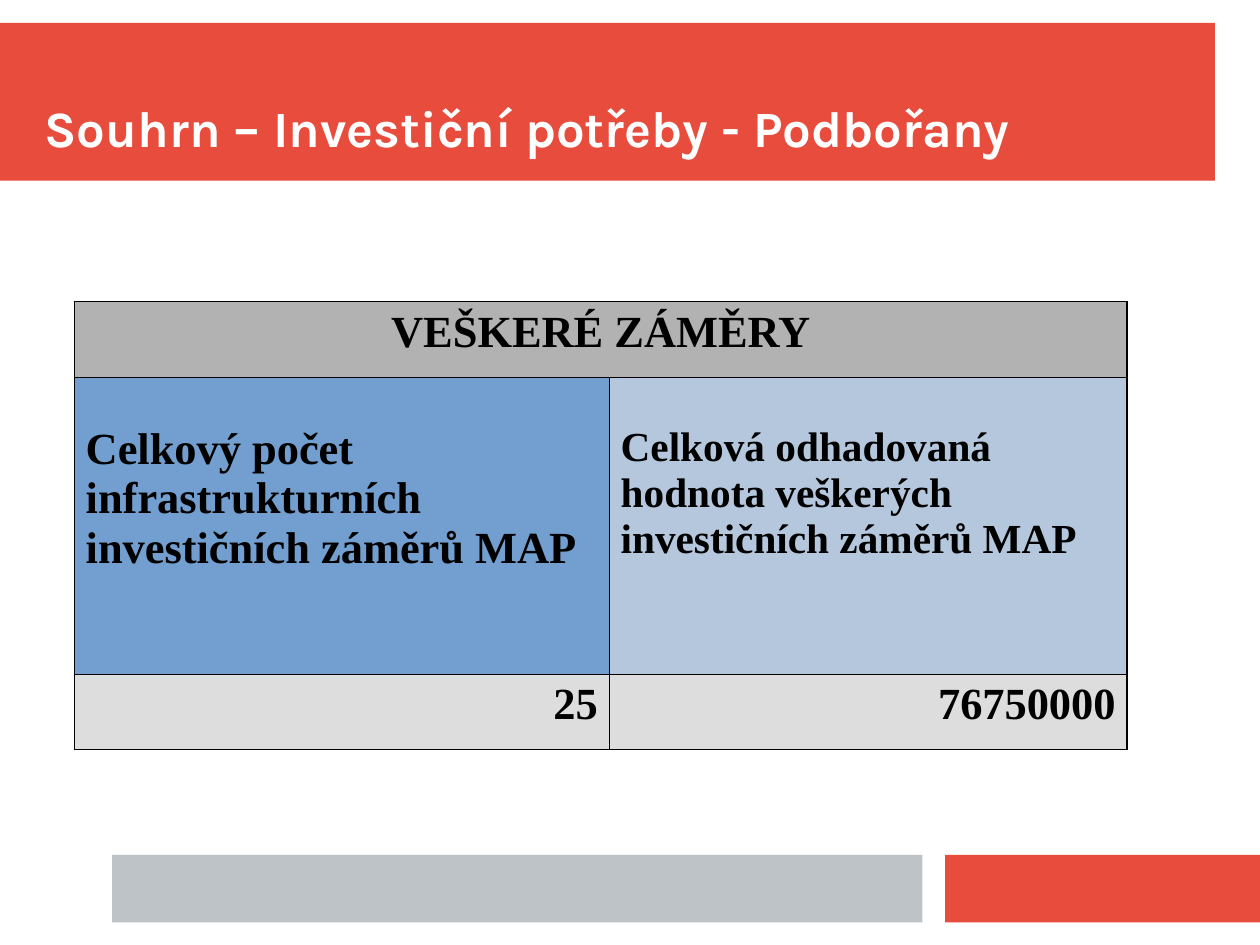
from lxml import etree
from pptx import Presentation
from pptx import util as u
from pptx.dml.color import RGBColor
from pptx.enum import shapes, text
from pptx.oxml import ns

CM_PER_INCH = 2.54
RED = RGBColor(0xE7, 0x4C, 0x3C)
SILVER = RGBColor(0xBD, 0xC3, 0xC7)
WHITE = RGBColor(0xFF, 0xFF, 0xFF)
BLACK = RGBColor(0x00, 0x00, 0x00)
HEADER_GRAY = RGBColor(0xB2, 0xB2, 0xB2)
BLUE = RGBColor(0x72, 0x9F, 0xCF)
LIGHT_BLUE = RGBColor(0xB4, 0xC7, 0xDC)
VALUE_GRAY = RGBColor(0xDD, 0xDD, 0xDD)

LEFT = text.PP_ALIGN.LEFT
CENTER = text.PP_ALIGN.CENTER
RIGHT = text.PP_ALIGN.RIGHT


def add_band(slide, left, top, width, height, color):
    band = slide.shapes.add_shape(
        shapes.MSO_SHAPE.RECTANGLE,
        u.Inches(left), u.Inches(top), u.Inches(width), u.Inches(height))
    band.shadow.inherit = False
    band.fill.solid()
    band.fill.fore_color.rgb = color
    band.line.fill.background()


def format_paragraph(paragraph, font_name, size, color, alignment):
    paragraph.alignment = alignment
    for run in paragraph.runs:
        run.font.name = font_name
        run.font.size = u.Pt(size)
        run.font.bold = True
        run.font.color.rgb = color


def set_title(slide, wording):
    title = slide.shapes.title
    title.element.getparent().append(title.element)
    title.left, title.top = u.Inches(0.39), u.Inches(0.4)
    title.width, title.height = u.Inches(10.24), u.Inches(0.98)
    frame = title.text_frame
    frame.text = wording
    frame.word_wrap = True
    frame.auto_size = text.MSO_AUTO_SIZE.NONE
    frame.vertical_anchor = text.MSO_ANCHOR.BOTTOM
    frame.margin_left = frame.margin_right = 0
    frame.margin_top = frame.margin_bottom = 0
    format_paragraph(frame.paragraphs[0], "Karla", 32, WHITE, LEFT)


def add_borders(cell):
    properties = cell._tc.get_or_add_tcPr()
    for position, side in enumerate(("lnL", "lnR", "lnT", "lnB")):
        line = etree.Element(ns.qn(f"a:{side}"), w=str(u.Pt(1)))
        fill = etree.SubElement(line, ns.qn("a:solidFill"))
        etree.SubElement(fill, ns.qn("a:srgbClr"), val=str(BLACK))
        properties.insert(position, line)


def fill_cell(cell, wording, color, size, alignment, margin_top):
    cell.fill.solid()
    cell.fill.fore_color.rgb = color
    cell.margin_top = u.Inches(margin_top)
    cell.text = wording
    paragraph = cell.text_frame.paragraphs[0]
    format_paragraph(paragraph, "Times New Roman", size, BLACK, alignment)
    add_borders(cell)


def add_summary_table(slide, rows):
    widths, heights = (4.68, 4.53), (0.66, 2.6, 0.66)
    table = slide.shapes.add_table(
        len(heights), len(widths), u.Inches(0.65), u.Inches(2.64),
        u.Inches(sum(widths)), u.Inches(sum(heights))).table
    for column, width in zip(table.columns, widths):
        column.width = u.Inches(width)
    for row, height in zip(table.rows, heights):
        row.height = u.Inches(height)
    table.cell(0, 0).merge(table.cell(0, 1))
    for row, (alignment, margin_top, entries) in zip(table.rows, rows):
        for cell, (wording, color, size) in zip(row.cells, entries):
            fill_cell(cell, wording, color, size, alignment, margin_top)


def main():
    presentation = Presentation()
    presentation.slide_width = u.Inches(28 / CM_PER_INCH)
    presentation.slide_height = u.Inches(21 / CM_PER_INCH)
    slide = presentation.slides.add_slide(presentation.slide_layouts[5])

    add_band(slide, 0, 0.2, 10.63, 1.38, RED)
    add_band(slide, 8.27, 7.48, 2.76, 0.59, RED)
    add_band(slide, 0.98, 7.48, 7.09, 0.59, SILVER)
    set_title(slide, "Souhrn – Investiční potřeby - Podbořany")
    add_summary_table(slide, [
        (CENTER, 0.05, [("VEŠKERÉ ZÁMĚRY", HEADER_GRAY, 28),
                        ("", HEADER_GRAY, 28)]),
        (LEFT, 0.42, [
            ("Celkový počet infrastrukturních investičních záměrů MAP",
             BLUE, 28),
            ("Celková odhadovaná hodnota veškerých investičních záměrů MAP",
             LIGHT_BLUE, 26)]),
        (RIGHT, 0.05, [("25", VALUE_GRAY, 28),
                       ("76750000", VALUE_GRAY, 28)]),
    ])
    presentation.save("out.pptx")


if __name__ == "__main__":
    main()
